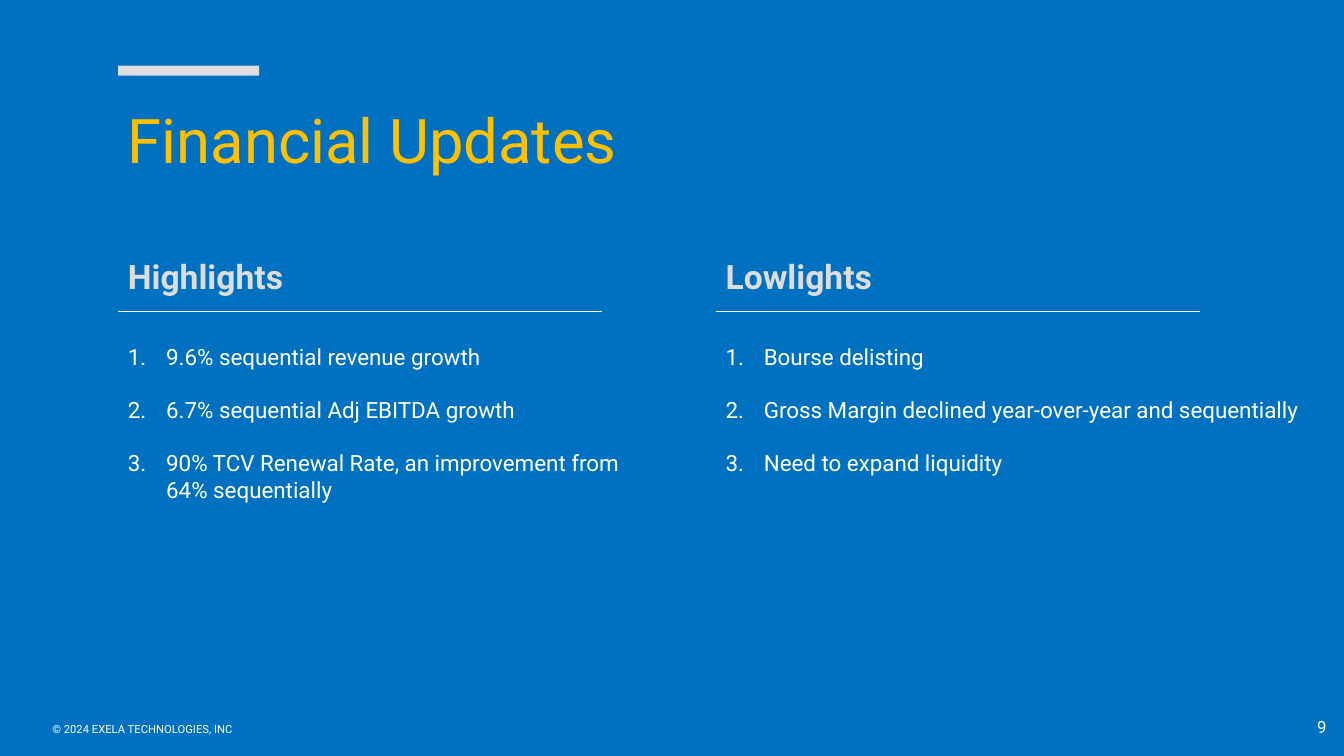
from pptx import Presentation, util as u
from pptx.dml.color import RGBColor
from pptx.enum import shapes, text
from pptx.oxml.ns import qn
from lxml import etree

WIDTH, HEIGHT = u.Inches(13.33), u.Inches(7.5)
THEME = {
    "font": "Roboto",
    "back": "0070C0", "gold": "FFC000", "gray": "DDDDDD", "white": "FFFFFF",
    "title": 44, "head": 24, "list": 16, "page": 12, "foot": 8,
    "gap": 19, "rule": 0.5,
}
LEFT, RIGHT = 8.78, 53.25
TOPICS = [
    (LEFT, "Highlights", 38.62, [
        "9.6% sequential revenue growth",
        "6.7% sequential Adj EBITDA growth",
        "90% TCV Renewal Rate, an improvement from 64% sequentially",
    ]),
    (RIGHT, "Lowlights", 46.2, [
        "Bourse delisting",
        "Gross Margin declined year-over-year and sequentially",
        "Need to expand liquidity",
    ]),
]


def color(name):
    """Return a theme colour."""
    return RGBColor.from_string(THEME[name])


def place(*shares):
    """Turn left, top, width and height in percent of the slide into lengths."""
    sides = (WIDTH, HEIGHT, WIDTH, HEIGHT)
    return [round(side * share / 100) for side, share in zip(sides, shares)]


def style(item, values):
    """Set each attribute of an item from a dict."""
    for name, value in values.items():
        setattr(item, name, value)


def number(para):
    """Give a paragraph an automatic number and a hanging indent."""
    props = para._p.get_or_add_pPr()
    indent = u.Inches(0.38)
    props.set("marL", str(indent))
    props.set("indent", str(-indent))
    etree.SubElement(props, qn("a:buFont"), typeface="+mj-lt")
    etree.SubElement(props, qn("a:buAutoNum"), type="arabicPeriod")


def write(slide, area, lines, size, tone="white", bold=False, anchor="TOP",
          listed=False, **layout):
    """Add a text box with one paragraph for each line."""
    frame = slide.shapes.add_textbox(*place(*area)).text_frame
    style(frame, {"word_wrap": True,
                  "vertical_anchor": getattr(text.MSO_ANCHOR, anchor)})
    for index, line in enumerate(lines):
        para = frame.paragraphs[0] if index == 0 else frame.add_paragraph()
        if listed:
            number(para)
        if index:
            para.space_before = u.Pt(THEME["gap"])
        style(para, layout)
        run = para.add_run()
        run.text = line
        style(run.font, {"name": THEME["font"], "size": u.Pt(THEME[size]),
                         "bold": bold})
        run.font.color.rgb = color(tone)


def bar(slide, area):
    """Add the accent bar above the title."""
    shape = slide.shapes.add_shape(shapes.MSO_SHAPE.RECTANGLE, *place(*area))
    shape.shadow.inherit = False
    shape.fill.solid()
    shape.fill.fore_color.rgb = color("gray")
    shape.line.fill.background()


def rule(slide, left, top, width):
    """Add a thin level line."""
    x, y, span, _ = place(left, top, width, 0)
    line = slide.shapes.add_connector(
        shapes.MSO_CONNECTOR.STRAIGHT, x, y, x + span, y)
    line.line.width = u.Pt(THEME["rule"])
    line.line.color.rgb = color("white")
    etree.SubElement(line._element.spPr, qn("a:effectLst"))


def topic(slide, left, head, width, items):
    """Add a heading, its rule and its numbered list."""
    write(slide, (left, 44.67, width, 30), items, "list", listed=True)
    rule(slide, left, 41.2, 36)
    write(slide, (left, 33.2, 19, 6.67), [head], "head", "gray", True, "MIDDLE")


def main():
    """Build the slide and save it."""
    deck = Presentation()
    style(deck, {"slide_width": WIDTH, "slide_height": HEIGHT})
    slide = deck.slides.add_slide(deck.slide_layouts[6])
    slide.background.fill.solid()
    slide.background.fill.fore_color.rgb = color("back")
    write(slide, (3.15, 94.93, 30.4, 3.2),
          ["© 2024 EXELA TECHNOLOGIES, INC"], "foot")
    bar(slide, (LEFT, 8.67, 10.5, 1.33))
    write(slide, (LEFT, 9.33, 58, 19.33), ["Financial Updates"], "title",
          "gold", anchor="MIDDLE", line_spacing=0.9)
    for part in TOPICS:
        topic(slide, *part)
    write(slide, (76.95, 93.47, 22.5, 5.33), ["9"], "page", anchor="MIDDLE",
          alignment=text.PP_ALIGN.RIGHT)
    deck.save("out.pptx")


if __name__ == "__main__":
    main()
